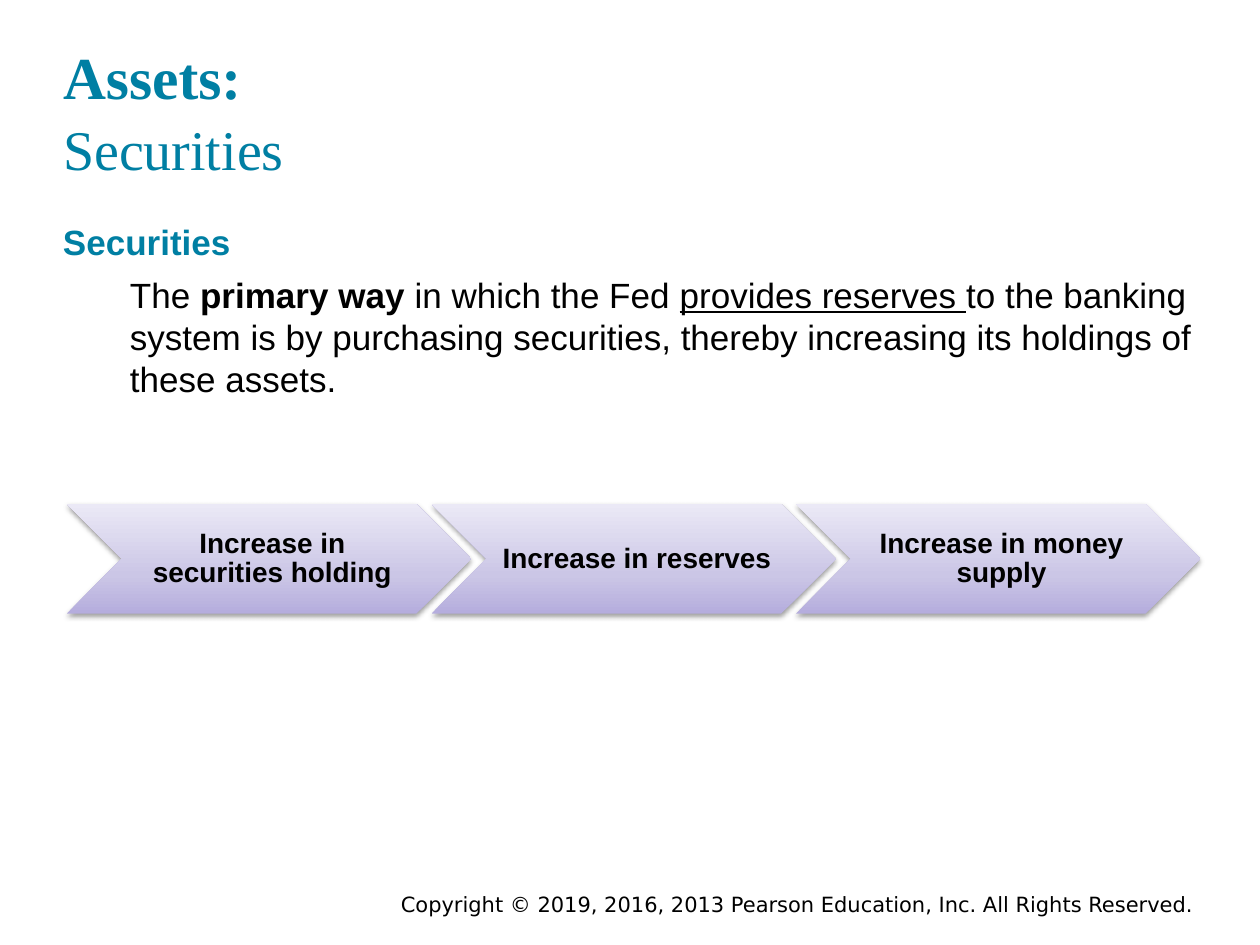
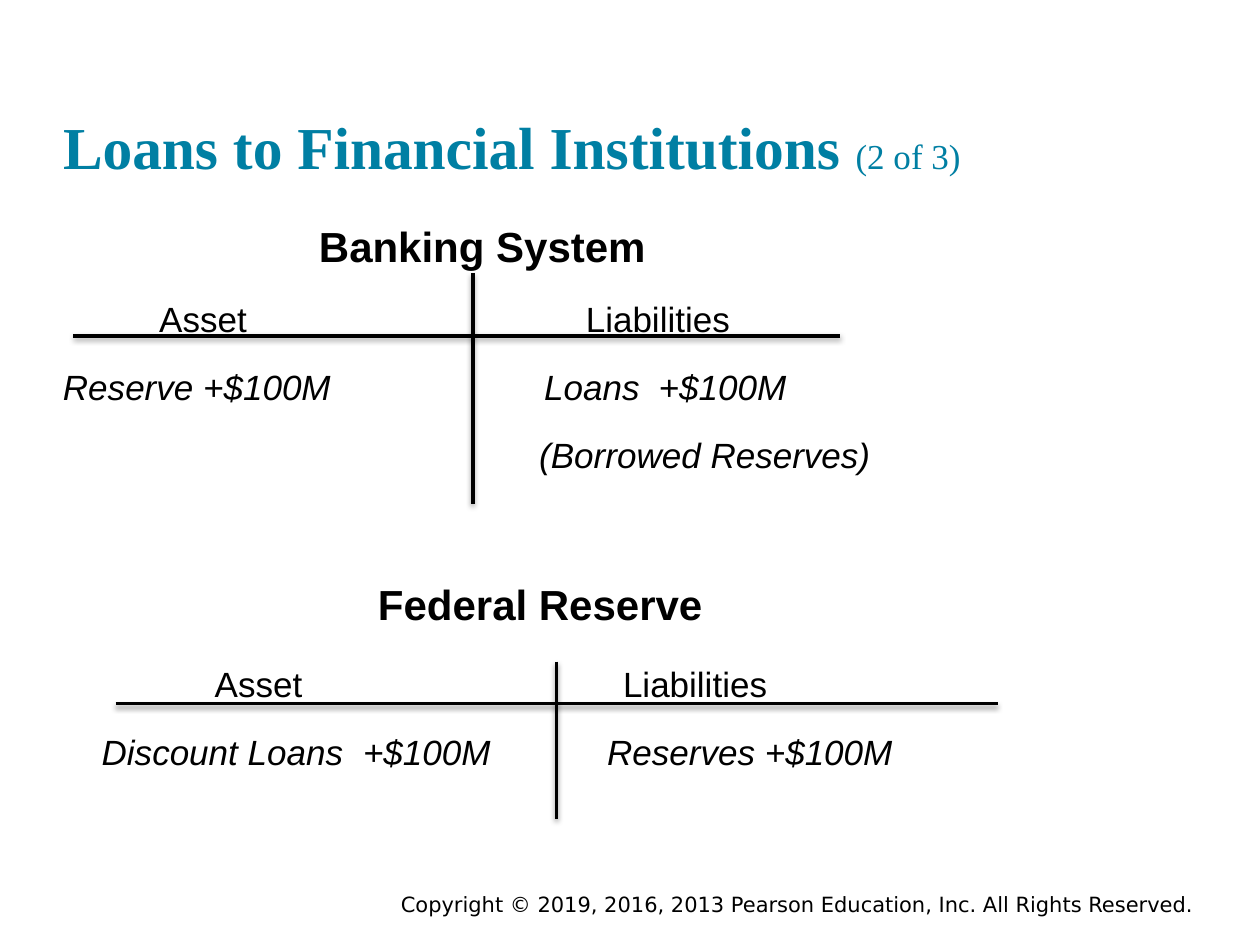
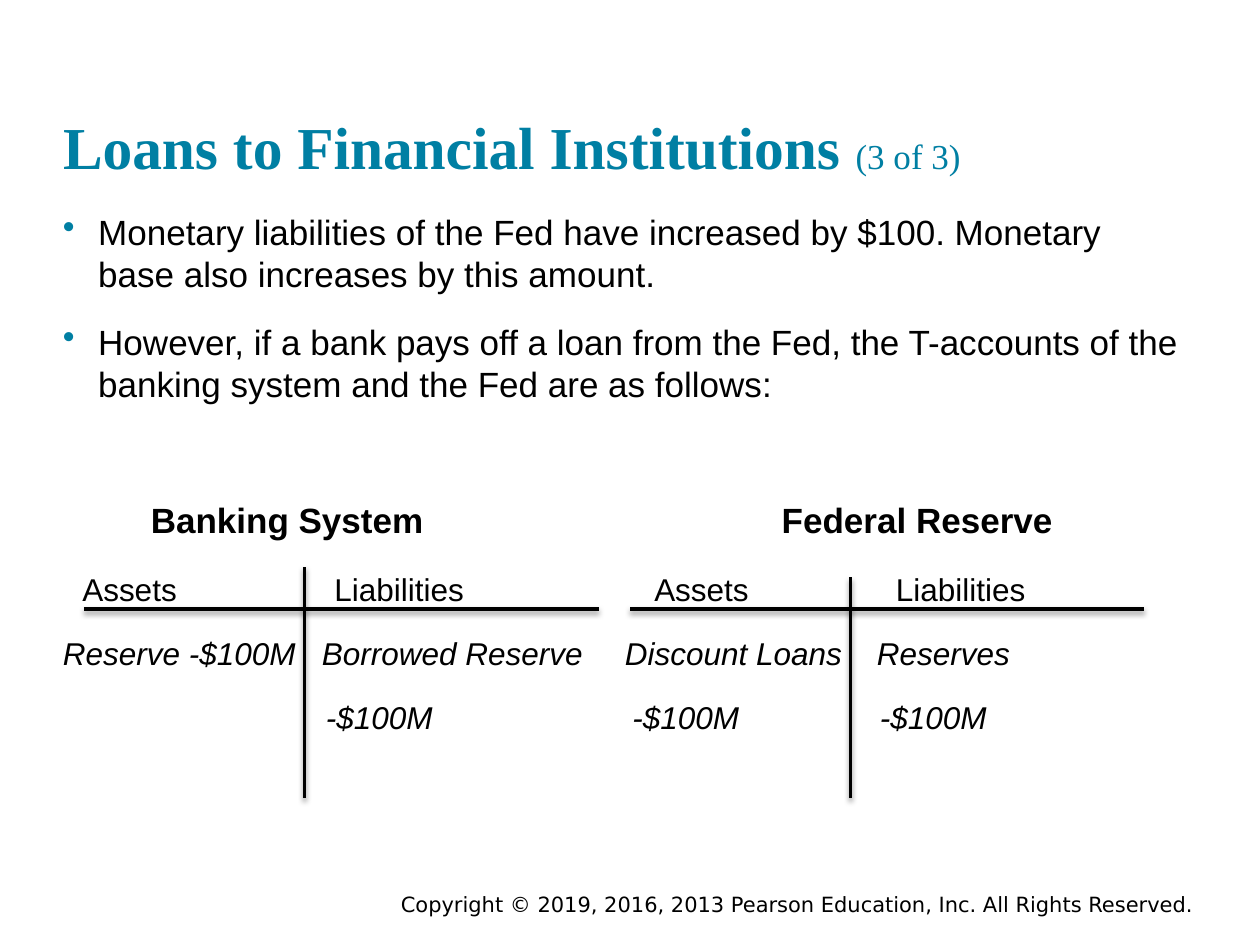
from copy import deepcopy
from dataclasses import dataclass

from lxml import etree
from pptx import Presentation
from pptx.dml.color import RGBColor
from pptx.enum.shapes import MSO_CONNECTOR, MSO_SHAPE
from pptx.enum.text import MSO_ANCHOR, MSO_AUTO_SIZE, PP_ALIGN
from pptx.oxml.ns import qn
from pptx.util import Cm, Pt

LEFT, CENTER = PP_ALIGN.LEFT, PP_ALIGN.CENTER
TOP, MIDDLE, BOTTOM = MSO_ANCHOR.TOP, MSO_ANCHOR.MIDDLE, MSO_ANCHOR.BOTTOM
CHEVRON, STRAIGHT = MSO_SHAPE.CHEVRON, MSO_CONNECTOR.STRAIGHT
TITLE_ONLY = 5


@dataclass(frozen=True)
class Theme:
    teal: RGBColor = RGBColor(0x00, 0x7F, 0xA3)
    black: RGBColor = RGBColor(0, 0, 0)
    chevron_stops: tuple = ((0, "B5ADDD"), (0.35, "CBC6E6"), (1, "EBE9F6"))
    title_font: str = "Times New Roman"
    body_font: str = "Arial"
    footer_font: str = "DejaVu Sans"
    title_size: int = 34
    subtitle_size: int = 32
    account_size: int = 24
    body_size: int = 20
    small_size: int = 18
    chevron_size: int = 16
    footer_size: int = 12
    leading: float = 1.2
    para_gap: int = 15
    margin: float = 1.27
    content_width: float = 22.86


THEME = Theme()
FOOTER = "Copyright © 2019, 2016, 2013 Pearson Education, Inc. All Rights Reserved."


@dataclass(frozen=True)
class Account:
    """A T-account: rows hold (offset in cm, text) cells; rules are in cm."""
    left: float
    top: float
    width: float
    heading: tuple
    columns: list
    entries: list
    bar: tuple   # left, right, height on the page
    stem: tuple  # position across the page, top, bottom
    heading_size: int = THEME.account_size
    row_size: int = THEME.body_size
    columns_gap: int = THEME.para_gap


# Text helpers
def set_frame(frame, anchor=TOP, insets=(0, 0, 0, 0)):
    frame.word_wrap = True
    frame.auto_size = MSO_AUTO_SIZE.NONE
    frame.vertical_anchor = anchor
    (frame.margin_left, frame.margin_top,
     frame.margin_right, frame.margin_bottom) = map(Cm, insets)
    return frame


def add_box(page, left, top, width, height):
    box = page.shapes.add_textbox(Cm(left), Cm(top), Cm(width), Cm(height))
    return set_frame(box.text_frame)


def add_para(frame, gap=THEME.para_gap):
    """Return the empty first paragraph, or a new one set off by the gap."""
    para = frame.paragraphs[0]
    if para.text:
        para = frame.add_paragraph()
        para.space_before = Pt(gap)
    return para


def style_para(para, size, color=THEME.black, name=THEME.body_font,
               bold=False, italic=False, align=LEFT):
    para.alignment = align
    para.line_spacing = Pt(size * THEME.leading)
    font = para.font
    font.name, font.size, font.bold, font.italic = name, Pt(size), bold, italic
    font.color.rgb = color


def add_span(para, text, **look):
    span = para.add_run()
    span.text = text
    for key, value in look.items():
        setattr(span.font, key, value)


def add_bullet(frame, text):
    para = add_para(frame)
    para.text = text
    properties = para._p.get_or_add_pPr()
    properties.set("marL", str(Cm(0.71)))
    properties.set("indent", str(-Cm(0.71)))
    color = etree.SubElement(properties, qn("a:buClr"))
    etree.SubElement(color, qn("a:srgbClr"), val=str(THEME.teal))
    etree.SubElement(properties, qn("a:buChar"), char="•")
    style_para(para, THEME.body_size)


def add_row(frame, cells, size, gap=THEME.para_gap, **look):
    """Set the cells of one account row on tab stops."""
    para = add_para(frame, gap)
    para.text = "".join(("\t" if offset else "") + text for offset, text in cells)
    stops = etree.SubElement(para._p.get_or_add_pPr(), qn("a:tabLst"))
    for offset, _ in cells:
        if offset:
            etree.SubElement(stops, qn("a:tab"), pos=str(Cm(offset)), algn="l")
    style_para(para, size, **look)


# Shape helpers
def add_shadow(shape):
    effects = etree.SubElement(shape._element.spPr, qn("a:effectLst"))
    shadow = etree.SubElement(effects, qn("a:outerShdw"), blurRad=str(Pt(3.1)),
                              dist=str(Pt(1.6)), dir="5400000", rotWithShape="0")
    color = etree.SubElement(shadow, qn("a:srgbClr"), val=str(THEME.black))
    etree.SubElement(color, qn("a:alpha"), val="38000")


def add_rule(page, x1, y1, x2, y2):
    rule = page.shapes.add_connector(STRAIGHT, Cm(x1), Cm(y1), Cm(x2), Cm(y2))
    rule.line.color.rgb = THEME.black
    rule.line.width = Pt(2)
    add_shadow(rule)


def fill_chevron(shape):
    shape.fill.gradient()
    shape.fill.gradient_angle = 90
    stop_list = shape._element.spPr.find(".//" + qn("a:gsLst"))
    stop_list.insert(1, deepcopy(stop_list[0]))
    for stop, (position, color) in zip(shape.fill.gradient_stops, THEME.chevron_stops):
        stop.color.rgb = RGBColor.from_string(color)
        stop.position = position


def add_chevrons(page, labels):
    for index, label in enumerate(labels):
        shape = page.shapes.add_shape(CHEVRON, Cm(1.35 + 7.35 * index), Cm(10.16),
                                      Cm(8.15), Cm(2.21))
        fill_chevron(shape)
        shape.line.fill.background()
        add_shadow(shape)
        frame = set_frame(shape.text_frame, MIDDLE, (0.18, 0.05, 0.05, 0.05))
        para = add_para(frame)
        para.text = label
        style_para(para, THEME.chevron_size, bold=True, align=CENTER)
        para.line_spacing = Pt(17)


def add_account(page, account):
    rows = 2 + len(account.entries)
    frame = add_box(page, account.left, account.top, account.width, 1.35 * rows)
    add_row(frame, [account.heading], account.heading_size, bold=True)
    add_row(frame, account.columns, account.row_size, account.columns_gap)
    for entry in account.entries:
        add_row(frame, entry, account.row_size, italic=True)
    bar_left, bar_right, bar_y = account.bar
    stem_x, stem_top, stem_bottom = account.stem
    add_rule(page, bar_left, bar_y, bar_right, bar_y)
    add_rule(page, stem_x, stem_top, stem_x, stem_bottom)


# Page frame: title and copyright line
def add_page(deck, heading, detail, detail_size, stacked=False):
    page = deck.slides.add_slide(deck.slide_layouts[TITLE_ONLY])
    title = page.shapes.title
    title.left, title.top = Cm(THEME.margin), Cm(0.61)
    title.width, title.height = Cm(THEME.content_width), Cm(3.05)
    para = set_frame(title.text_frame, BOTTOM).paragraphs[0]
    style_para(para, THEME.title_size, THEME.teal, THEME.title_font)
    para.line_spacing = Pt(40)
    add_span(para, heading, size=Pt(THEME.title_size), bold=True)
    if stacked:
        para.add_line_break()
    add_span(para, detail, size=Pt(detail_size), bold=False)

    frame = add_box(page, 7.5, 17.98, 17.15, 0.5)
    footer = frame.paragraphs[0]
    footer.text = FOOTER
    style_para(footer, THEME.footer_size, name=THEME.footer_font, align=CENTER)
    return page


# Slides
def build_securities(deck):
    page = add_page(deck, "Assets:", "Securities", THEME.subtitle_size, stacked=True)
    frame = add_box(page, THEME.margin, 4.45, THEME.content_width, 4.5)
    para = add_para(frame)
    para.text = "Securities"
    style_para(para, THEME.body_size, THEME.teal, bold=True)

    para = add_para(frame, gap=6)
    para._p.get_or_add_pPr().set("marL", str(Cm(1.35)))
    style_para(para, THEME.body_size)
    add_span(para, "The ")
    add_span(para, "primary way ", bold=True)
    add_span(para, "in which the Fed ")
    add_span(para, "provides reserves ", underline=True)
    add_span(para, "to the banking system is by purchasing securities, "
                   "thereby increasing its holdings of these assets.")
    add_chevrons(page, ["Increase in securities holding", "Increase in reserves",
                        "Increase in money supply"])


def build_loan_accounts(deck):
    page = add_page(deck, "Loans to Financial Institutions ", "(2 of 3)", THEME.body_size)
    add_account(page, Account(
        THEME.margin, 4.45, THEME.content_width,
        heading=(5.16, "Banking System"),
        columns=[(1.94, "Asset"), (10.54, "Liabilities")],
        entries=[[(0, "Reserve +$100M"), (9.7, "Loans"), (12.01, "+$100M")],
                 [(9.6, "(Borrowed Reserves)")]],
        bar=(1.48, 16.93, 6.77), stem=(9.53, 5.5, 10.16)))
    add_account(page, Account(
        THEME.margin, 11.66, THEME.content_width,
        heading=(6.35, "Federal Reserve"),
        columns=[(3.06, "Asset"), (11.29, "Liabilities")],
        entries=[[(0.78, "Discount Loans"), (6.05, "+$100M"),
                  (10.97, "Reserves +$100M")]],
        bar=(2.33, 20.11, 14.18), stem=(11.22, 13.34, 16.51), columns_gap=19))


def build_repayment(deck):
    page = add_page(deck, "Loans to Financial Institutions ", "(3 of 3)", THEME.body_size)
    frame = add_box(page, THEME.margin, 4.24, 22.66, 4.5)
    add_bullet(frame, "Monetary liabilities of the Fed have increased by $100. "
                      "Monetary base also increases by this amount.")
    add_bullet(frame, "However, if a bank pays off a loan from the Fed, the T-accounts "
                      "of the banking system and the Fed are as follows:")

    sizes = dict(heading_size=THEME.body_size, row_size=THEME.small_size, columns_gap=17)
    add_account(page, Account(
        THEME.margin, 10.05, 11.2,
        heading=(1.77, "Banking System"),
        columns=[(0.39, "Assets"), (5.47, "Liabilities")],
        entries=[[(0, "Reserve -$100M"), (5.22, "Borrowed Reserve")],
                 [(5.3, "-$100M")]],
        bar=(1.69, 12.07, 12.28), stem=(6.14, 11.43, 16.09), **sizes))
    add_account(page, Account(
        12.6, 10.05, 11.2,
        heading=(3.16, "Federal Reserve"),
        columns=[(0.59, "Assets"), (5.46, "Liabilities")],
        entries=[[(0, "Discount Loans"), (5.08, "Reserves")],
                 [(0.15, "-$100M"), (5.14, "-$100M")]],
        bar=(12.7, 23.07, 12.28), stem=(17.15, 11.64, 16.09), **sizes))


def main():
    deck = Presentation()
    deck.slide_width, deck.slide_height = Cm(25.4), Cm(19.05)
    build_securities(deck)
    build_loan_accounts(deck)
    build_repayment(deck)
    deck.save("out.pptx")


if __name__ == "__main__":
    main()
